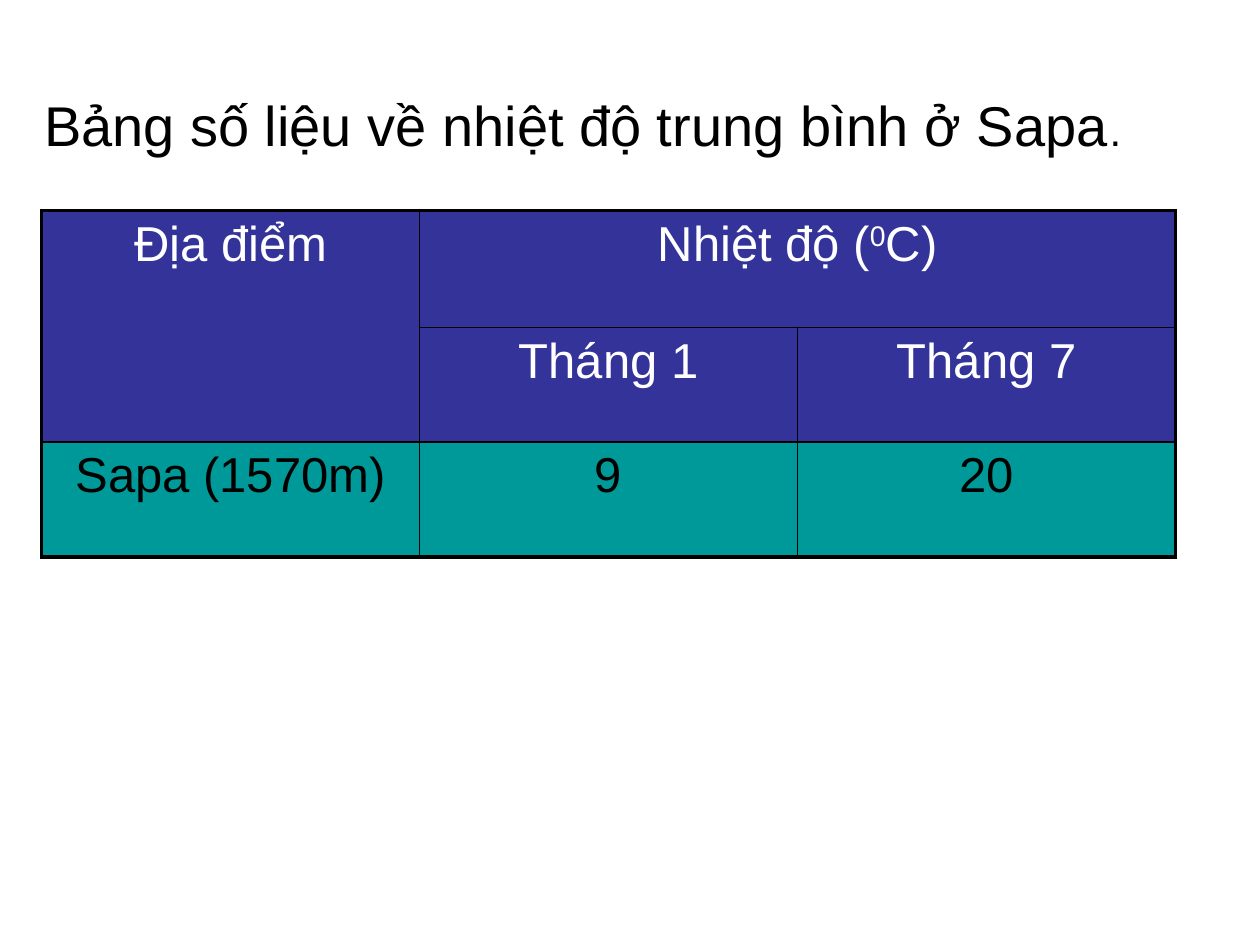
from dataclasses import dataclass

from lxml.etree import SubElement
from pptx import Presentation
from pptx.dml.color import RGBColor
from pptx.enum.text import MSO_ANCHOR, MSO_AUTO_SIZE, PP_ALIGN
from pptx.oxml.ns import qn
from pptx.slide import Slide
from pptx.table import Table
from pptx.text.text import _Run as Run
from pptx.util import Inches, Pt


@dataclass(frozen=True)
class Theme:
    font: str = "Arial"
    title_size: int = 32
    stop_size: int = 24
    cell_size: int = 28
    black: str = "000000"
    white: str = "FFFFFF"
    header: str = "333399"
    body: str = "009999"
    outer_line: float = 2.25
    inner_line: float = 1


@dataclass(frozen=True)
class TableCell:
    row: int
    column: int
    runs: tuple[str, ...]
    row_span: int = 1
    column_span: int = 1


THEME = Theme()
COLUMN_WIDTHS = (3, 3, 3)
ROW_HEIGHTS = (0.93, 0.91, 0.91)
HEADER_ROWS = 2
SUPERSCRIPT = "0"
CELLS = (
    TableCell(0, 0, ("Địa điểm",), row_span=2),
    TableCell(0, 1, ("Nhiệt độ (", SUPERSCRIPT, "C)"), column_span=2),
    TableCell(1, 1, ("Tháng 1",)),
    TableCell(1, 2, ("Tháng 7",)),
    TableCell(2, 0, ("Sapa (1570m)",)),
    TableCell(2, 1, ("9",)),
    TableCell(2, 2, ("20",)),
)


def style_run(run: Run, size: int, color: str) -> None:
    run.font.name = THEME.font
    run.font.size = Pt(size)
    run.font.color.rgb = RGBColor.from_string(color)


def draw_title(slide: Slide) -> None:
    title = slide.shapes.title
    title.left, title.top = Inches(0.25), Inches(0.67)
    title.width, title.height = Inches(8.81), Inches(0.64)
    text_frame = title.text_frame
    text_frame.word_wrap = False
    text_frame.auto_size = MSO_AUTO_SIZE.SHAPE_TO_FIT_TEXT
    text_frame.vertical_anchor = MSO_ANCHOR.TOP
    paragraph = text_frame.paragraphs[0]
    paragraph.alignment = PP_ALIGN.LEFT
    parts = (
        ("Bảng số liệu về nhiệt độ trung bình ở Sapa", THEME.title_size),
        (".", THEME.stop_size),
    )
    for text, size in parts:
        run = paragraph.add_run()
        run.text = text
        style_run(run, size, THEME.black)


def draw_borders(properties, item: TableCell) -> None:
    outer_edges = {
        "a:lnL": item.column == 0,
        "a:lnR": item.column + item.column_span == len(COLUMN_WIDTHS),
        "a:lnT": item.row == 0,
        "a:lnB": item.row + item.row_span == len(ROW_HEIGHTS),
    }
    for tag, is_outer in outer_edges.items():
        width = THEME.outer_line if is_outer else THEME.inner_line
        line = SubElement(properties, qn(tag), w=str(Pt(width)))
        fill = SubElement(line, qn("a:solidFill"))
        SubElement(fill, qn("a:srgbClr"), val=THEME.black)


def draw_cell(table: Table, item: TableCell) -> None:
    cell = table.cell(item.row, item.column)
    if item.row_span * item.column_span > 1:
        last_row = item.row + item.row_span - 1
        last_column = item.column + item.column_span - 1
        cell.merge(table.cell(last_row, last_column))
    is_header = item.row < HEADER_ROWS
    draw_borders(cell._tc.get_or_add_tcPr(), item)
    cell.fill.solid()
    cell.fill.fore_color.rgb = RGBColor.from_string(THEME.header if is_header else THEME.body)
    paragraph = cell.text_frame.paragraphs[0]
    paragraph.alignment = PP_ALIGN.CENTER
    for text in item.runs:
        run = paragraph.add_run()
        run.text = text
        style_run(run, THEME.cell_size, THEME.white if is_header else THEME.black)
        if text == SUPERSCRIPT:
            run.font._element.set("baseline", "30000")


def draw_table(slide: Slide) -> None:
    frame = slide.shapes.add_table(
        len(ROW_HEIGHTS), len(COLUMN_WIDTHS), Inches(0.33), Inches(1.67),
        Inches(sum(COLUMN_WIDTHS)), Inches(sum(ROW_HEIGHTS)),
    )
    table = frame.table
    table.first_row = table.horz_banding = False
    for column, width in zip(table.columns, COLUMN_WIDTHS):
        column.width = Inches(width)
    for row, height in zip(table.rows, ROW_HEIGHTS):
        row.height = Inches(height)
    for item in CELLS:
        draw_cell(table, item)


def main() -> None:
    """Build the slide with the mean temperatures of Sapa."""
    presentation = Presentation()
    presentation.slide_width, presentation.slide_height = Inches(10), Inches(7.5)
    slide = presentation.slides.add_slide(presentation.slide_layouts[5])
    draw_table(slide)
    draw_title(slide)
    presentation.save("out.pptx")


if __name__ == "__main__":
    main()
